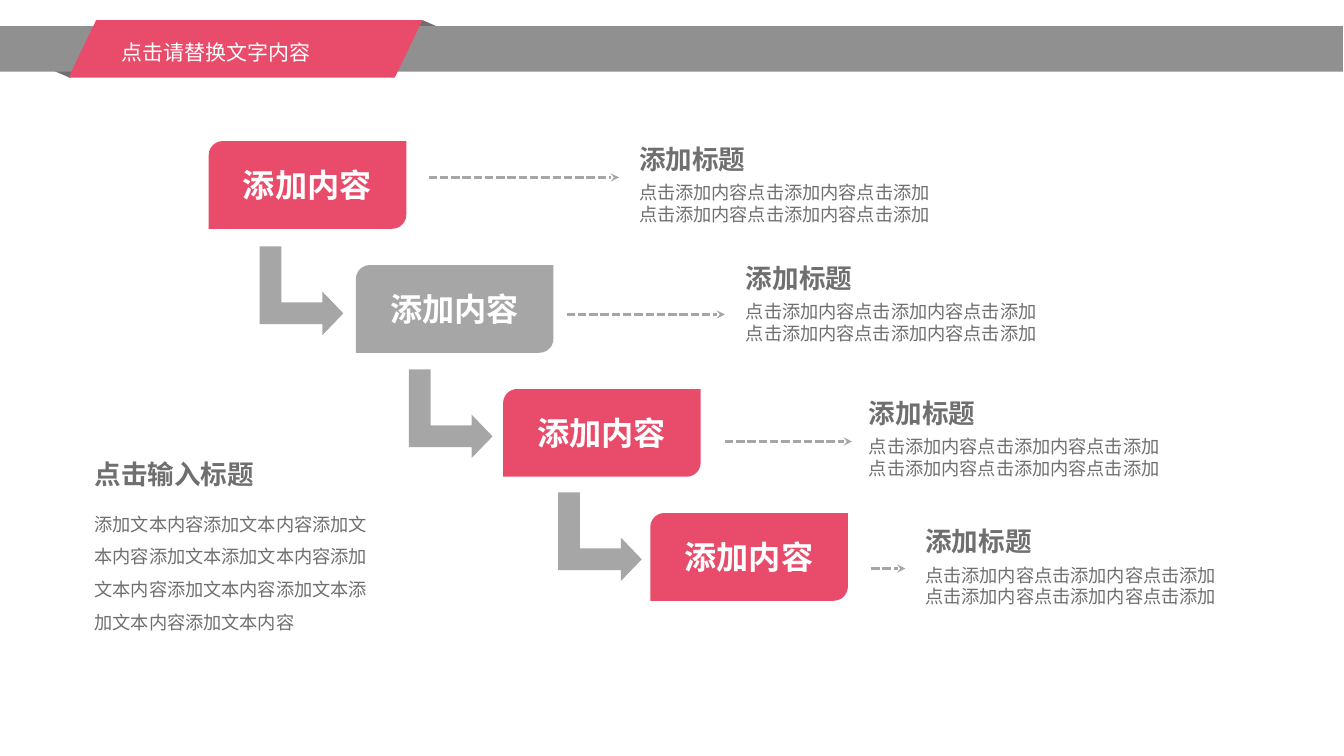
from lxml import etree
from pptx import Presentation
from pptx.dml.color import RGBColor
from pptx.enum.dml import MSO_LINE
from pptx.enum.lang import MSO_LANGUAGE_ID
from pptx.enum.shapes import MSO_CONNECTOR, MSO_SHAPE
from pptx.enum.text import MSO_ANCHOR, MSO_AUTO_SIZE, PP_ALIGN
from pptx.oxml.ns import qn
from pptx.util import Inches, Pt

RECTANGLE = MSO_SHAPE.RECTANGLE
TRIANGLE = MSO_SHAPE.ISOSCELES_TRIANGLE
PARALLELOGRAM = MSO_SHAPE.PARALLELOGRAM
CARD = MSO_SHAPE.ROUND_2_DIAG_RECTANGLE
BENT_ARROW = MSO_SHAPE.BENT_UP_ARROW
STRAIGHT = MSO_CONNECTOR.STRAIGHT
DASH = MSO_LINE.SQUARE_DOT
LEFT, CENTER = PP_ALIGN.LEFT, PP_ALIGN.CENTER
TOP, MIDDLE = MSO_ANCHOR.TOP, MSO_ANCHOR.MIDDLE
GROW, FIXED = MSO_AUTO_SIZE.SHAPE_TO_FIT_TEXT, MSO_AUTO_SIZE.NONE
CHINESE = MSO_LANGUAGE_ID.SIMPLIFIED_CHINESE

PINK, GRAY, DARK, BAND, WHITE = "E84C6A", "A6A6A6", "6F6F6F", "909090", "FFFFFF"
SANS, CALIBRI, ARIAL = "Noto Sans CJK SC", "Calibri", "Arial"

DETAIL = "点击添加内容点击添加内容点击添加"
BODY = ("添加文本内容添加文本内容添加文本内容添加文本添加文本内容添加"
        "文本内容添加文本内容添加文本添加文本内容添加文本内容")

# Card colour, dashed arrow (start, end, height), caption left and top
STEPS = [
    (PINK, (4.25, 6.14, 1.76), (6.24, 1.31)),
    (GRAY, (5.62, 7.19, 3.12), (7.30, 2.49)),
    (PINK, (7.19, 8.45, 4.38), (8.52, 3.83)),
    (PINK, (8.64, 8.98, 5.64), (9.08, 5.10)),
]


def color(value):
    return RGBColor.from_string(value)


class SlideBuilder:
    """Holds the text styles and the current slide."""

    styles = {
        "title": dict(size=Pt(15), name=ARIAL, bold=False),
        "card": dict(size=Pt(23), name=SANS, bold=True),
        "heading": dict(size=Pt(19), name=SANS, bold=True),
        "body": dict(size=Pt(13), name=SANS, bold=False),
    }

    def __init__(self, presentation):
        self.slide = presentation.slides.add_slide(presentation.slide_layouts[5])
        self.shapes = self.slide.shapes

    def set_text(self, shape, lines, style, ink, align=LEFT, anchor=TOP,
                 spacing=1.0, auto_size=FIXED, wrap=True, fonts=()):
        frame = shape.text_frame
        frame_format = dict(
            word_wrap=wrap, auto_size=auto_size, vertical_anchor=anchor,
            margin_left=Inches(0.1), margin_right=Inches(0.1),
            margin_top=Inches(0.05), margin_bottom=Inches(0.05))
        for name, value in frame_format.items():
            setattr(frame, name, value)
        for index, line in enumerate(lines):
            paragraph = frame.paragraphs[0] if index == 0 else frame.add_paragraph()
            paragraph.alignment = align
            paragraph.line_spacing = spacing
            run = paragraph.add_run()
            run.text = line
            run_format = dict(self.styles[style], language_id=CHINESE)
            if fonts:
                run_format["name"] = fonts[index]
            for name, value in run_format.items():
                setattr(run.font, name, value)
            run.font.color.rgb = color(ink)
        # The East Asian face follows the Latin one in the run properties
        for latin in list(shape.element.iter(qn("a:latin"))):
            latin.addnext(etree.Element(qn("a:ea"), typeface=CALIBRI))

    def shape(self, kind, left, top, width, height, fill, adjustments=(), rotation=0):
        shape = self.shapes.add_shape(
            kind, Inches(left), Inches(top), Inches(width), Inches(height))
        shape.shadow.inherit = False
        shape.fill.solid()
        shape.fill.fore_color.rgb = color(fill)
        shape.line.fill.background()
        shape.rotation = rotation
        for index, value in enumerate(adjustments):
            shape.adjustments[index] = value
        return shape

    def text(self, left, top, width, height, lines, style, **layout):
        box = self.shapes.add_textbox(
            Inches(left), Inches(top), Inches(width), Inches(height))
        self.set_text(box, lines, style, DARK, **layout)

    def dashed_arrow(self, start, end, height):
        arrow = self.shapes.add_connector(
            STRAIGHT, Inches(start), Inches(height), Inches(end), Inches(height))
        arrow.line.color.rgb = color(GRAY)
        arrow.line.width = Pt(2)
        arrow.line.dash_style = DASH
        properties = arrow.element.spPr
        etree.SubElement(properties.find(qn("a:ln")), qn("a:tailEnd"), type="stealth")
        etree.SubElement(properties, qn("a:effectLst"))

    def title(self, left, top, width, height, words):
        title = self.shapes.title
        box = dict(left=left, top=top, width=width, height=height)
        for name, value in box.items():
            setattr(title, name, Inches(value))
        self.set_text(title, [words], "title", WHITE, spacing=1.5, auto_size=GROW)
        # Bring the title in front of the banner
        title.element.getparent().append(title.element)


def main():
    presentation = Presentation()
    presentation.slide_width = Inches(13.33)
    presentation.slide_height = Inches(7.5)
    builder = SlideBuilder(presentation)

    # Staircase of cards, each with its arrow and caption
    for index, (fill, arrow, (left, top)) in enumerate(STEPS):
        card = builder.shape(CARD, 2.07 + 1.46 * index, 1.4 + 1.23 * index,
                             1.96, 0.87, fill, (0.16, 0))
        builder.set_text(card, ["添加内容"], "card", WHITE, align=CENTER, anchor=MIDDLE)
        builder.dashed_arrow(*arrow)
        builder.text(left, top, 1.78, 0.53, ["添加标题"], "heading", anchor=MIDDLE)
        builder.text(left, top + 0.47, 4.13, 0.48, [DETAIL, DETAIL], "body",
                     anchor=MIDDLE, fonts=(SANS, CALIBRI))

    # Bent arrows between the cards
    for index in range(len(STEPS) - 1):
        builder.shape(BENT_ARROW, 2.55 + 1.48 * index, 2.47 + 1.22 * index,
                      0.88, 0.83, GRAY, (0.26, 0.26, 0.25), rotation=90)

    # Summary at the lower left
    builder.text(0.84, 4.93, 3.07, 1.45, [BODY], "body", spacing=1.5, auto_size=GROW)
    builder.text(0.84, 4.49, 1.8, 0.42, ["点击输入标题"], "heading",
                 auto_size=GROW, wrap=False)

    # Folded ribbon banner with the title
    builder.shape(TRIANGLE, 3.59, 0.2, 1.2, 0.26, DARK)
    builder.shape(TRIANGLE, 0.09, 0.51, 1.2, 0.26, DARK, rotation=180)
    builder.shape(RECTANGLE, -0.01, 0.26, 13.33, 0.45, BAND)
    builder.shape(PARALLELOGRAM, 0.68, 0.2, 3.51, 0.57, PINK, (0.48,))
    builder.title(1.11, 0.22, 2.63, 0.48, "点击请替换文字内容")

    presentation.save("out.pptx")


if __name__ == "__main__":
    main()
